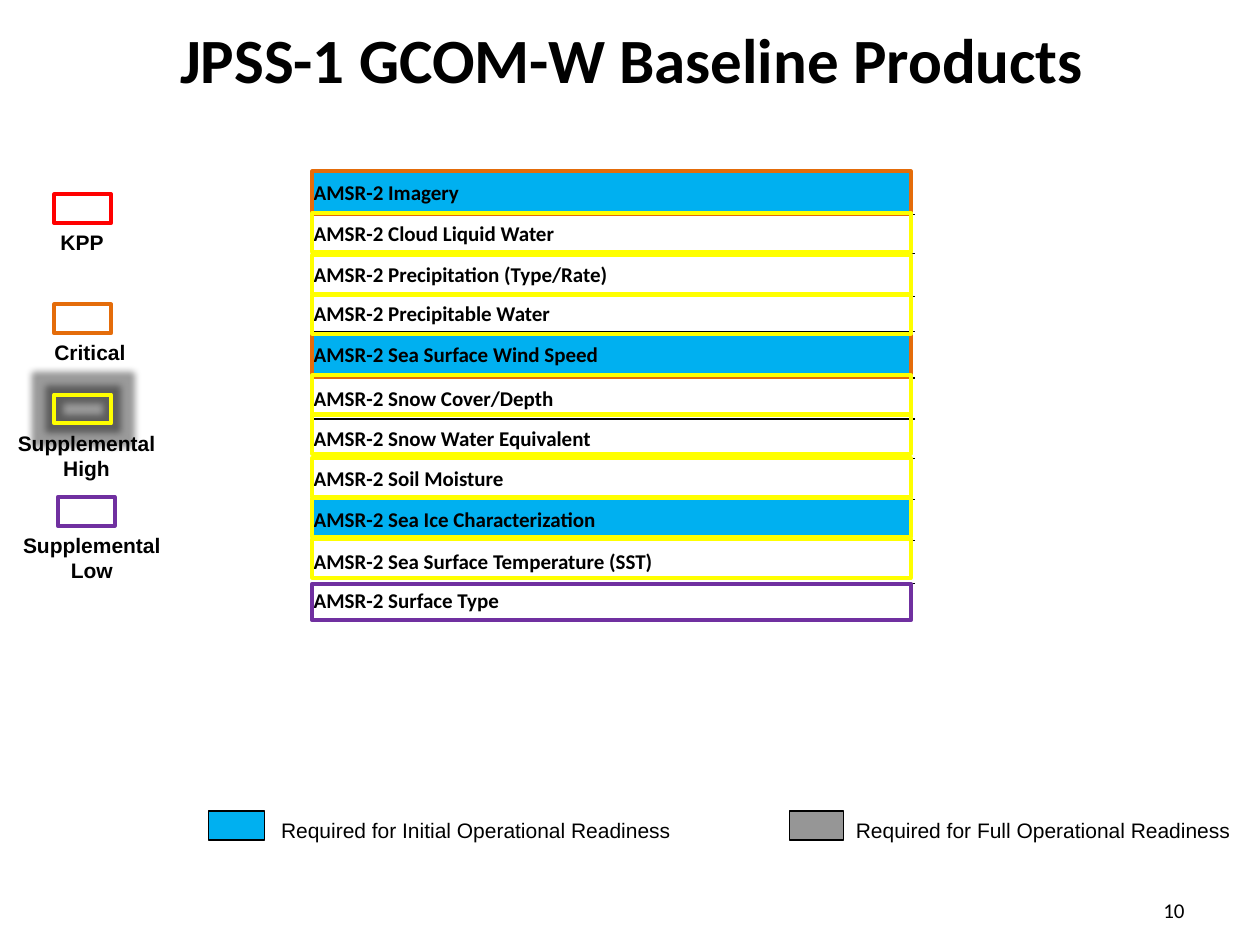
from lxml import etree
from pptx import Presentation
from pptx.dml.color import RGBColor
from pptx.enum import shapes, text
from pptx.oxml import parse_xml
from pptx.oxml.ns import qn
from pptx.util import Pt

BLACK = RGBColor(0, 0, 0)
WHITE = RGBColor(255, 255, 255)
BLUE = RGBColor(0x00, 0xB0, 0xF0)
GRAY = RGBColor(0x96, 0x96, 0x96)
RED = RGBColor(0xFF, 0x00, 0x00)
ORANGE = RGBColor(0xE4, 0x6C, 0x0A)
YELLOW = RGBColor(0xFF, 0xFF, 0x00)
PURPLE = RGBColor(0x70, 0x30, 0xA0)
NS = "http://schemas.openxmlformats.org/drawingml/2006/main"

deck = Presentation()
deck.slide_width, deck.slide_height = Pt(720), Pt(540)
slide = deck.slides.add_slide(deck.slide_layouts[5])


def add_box(left, top, width, height, line, line_width=2.25, fill=None):
    box = slide.shapes.add_shape(shapes.MSO_SHAPE.RECTANGLE,
                                 Pt(left), Pt(top), Pt(width), Pt(height))
    box.shadow.inherit = False
    if fill is None:
        box.fill.background()
    else:
        box.fill.solid()
        box.fill.fore_color.rgb = fill
    box.line.color.rgb = line
    box.line.width = Pt(line_width)
    return box


def add_label(words, left, top, width, height, font="Arial", bold=False,
              align=text.PP_ALIGN.LEFT, wrap=False):
    frame = slide.shapes.add_textbox(Pt(left), Pt(top), Pt(width), Pt(height)).text_frame
    frame.word_wrap = wrap
    paragraph = frame.paragraphs[0]
    paragraph.alignment = align
    run = paragraph.add_run()
    run.text = words
    run.font.name, run.font.size, run.font.bold = font, Pt(12), bold
    run.font.color.rgb = BLACK
    return frame


# Title and page number
title = slide.shapes.title
title.left, title.top, title.width, title.height = Pt(82), Pt(-11.5), Pt(558), Pt(90)
title.text_frame.vertical_anchor = text.MSO_ANCHOR.MIDDLE
heading = title.text_frame.paragraphs[0]
heading.alignment = text.PP_ALIGN.CENTER
run = heading.add_run()
run.text = "JPSS-1 GCOM-W Baseline Products"
run.font.name, run.font.size, run.font.bold = "Calibri", Pt(36), True
run.font.color.rgb = BLACK

page = add_label("10", 516, 505.5, 168, 29, "Calibri", align=text.PP_ALIGN.RIGHT, wrap=True)
page.vertical_anchor = text.MSO_ANCHOR.MIDDLE

# Readiness legend
for left, width, fill, words, words_left, words_width in [
    (119, 32, BLUE, "Required for Initial Operational Readiness", 153.5, 242),
    (451, 31, GRAY, "Required for Full Operational Readiness", 482, 230),
]:
    add_box(left, 463.5, width, 16.5, BLACK, 0.75, fill)
    add_label(words, words_left, 463.5, words_width, 16.5)

# Priority legend
LEFT, CENTER = text.PP_ALIGN.LEFT, text.PP_ALIGN.CENTER
for words, color, left, top, words_left, width, height, align in [
    ("KPP", RED, 31, 111, 27.5, 44, 16.5, LEFT),
    ("Critical", ORANGE, 31, 174, 24, 58, 16.5, LEFT),
    ("Supplemental High", YELLOW, 31, 225.5, -4.5, 108, 50, CENTER),
    ("Supplemental Low", PURPLE, 33, 284, -1.5, 108, 50, CENTER),
]:
    key = add_box(left, top, 32.5, 16.5, color)
    if color == YELLOW:
        effects = key._element.spPr.find(qn("a:effectLst"))
        effects.append(parse_xml(
            f'<a:glow xmlns:a="{NS}" rad="101600"><a:srgbClr val="000000">'
            '<a:alpha val="40000"/></a:srgbClr></a:glow>'))
    add_label(words, words_left, top + 16.75, width, height, bold=True,
              align=align, wrap=align == CENTER)

# Products: name, row height, required for initial readiness
products = [
    ("AMSR-2 Imagery", 25, True),
    ("AMSR-2 Cloud Liquid Water", 22.5, False),
    ("AMSR-2 Precipitation (Type/Rate)", 24.5, False),
    ("AMSR-2 Precipitable Water", 20, False),
    ("AMSR-2 Sea Surface Wind Speed", 26.5, True),
    ("AMSR-2 Snow Cover/Depth", 23.5, False),
    ("AMSR-2 Snow Water Equivalent", 22.5, False),
    ("AMSR-2 Soil Moisture", 23.5, False),
    ("AMSR-2 Sea Ice Characterization", 23.5, True),
    ("AMSR-2 Sea Surface Temperature (SST)", 24.5, False),
    ("AMSR-2 Surface Type", 19.5, False),
]
table = slide.shapes.add_table(len(products), 1, Pt(178.5), Pt(97.5),
                               Pt(343.5), Pt(255.5)).table
table.first_row = table.horz_banding = False
last = len(products) - 1
for index, (name, height, initial) in enumerate(products):
    table.rows[index].height = Pt(height)
    cell = table.cell(index, 0)
    cell.vertical_anchor = text.MSO_ANCHOR.MIDDLE
    cell.margin_left = cell.margin_right = cell.margin_top = Pt(0.75)
    cell.margin_bottom = 0
    run = cell.text_frame.paragraphs[0].add_run()
    run.text = name
    run.font.name, run.font.size, run.font.bold = "Calibri", Pt(12), True
    run.font.color.rgb = BLACK
    borders = {"lnL": (WHITE, 1.5), "lnR": (WHITE, 1.5),
               "lnT": (BLACK, 1) if index else (WHITE, 1.5),
               "lnB": (BLACK, 1) if index < last else (WHITE, 1.5)}
    for side, (color, width) in borders.items():
        edge = etree.SubElement(cell._tc.get_or_add_tcPr(), qn(f"a:{side}"), w=str(Pt(width)))
        solid = etree.SubElement(edge, qn("a:solidFill"))
        etree.SubElement(solid, qn("a:srgbClr"), val=str(color))
    if initial:
        cell.fill.solid()
        cell.fill.fore_color.rgb = BLUE
    else:
        cell.fill.background()

# Priority outlines over the rows
for color, height, tops in [
    (ORANGE, 24.5, [98, 191]),
    (YELLOW, 22.25, [121.75, 145.5, 168.5, 214.5, 237, 261.5, 284.5, 308]),
    (PURPLE, 21, [333.5]),
]:
    for top in tops:
        add_box(178.5, top, 342, height, color)

deck.save("out.pptx")
